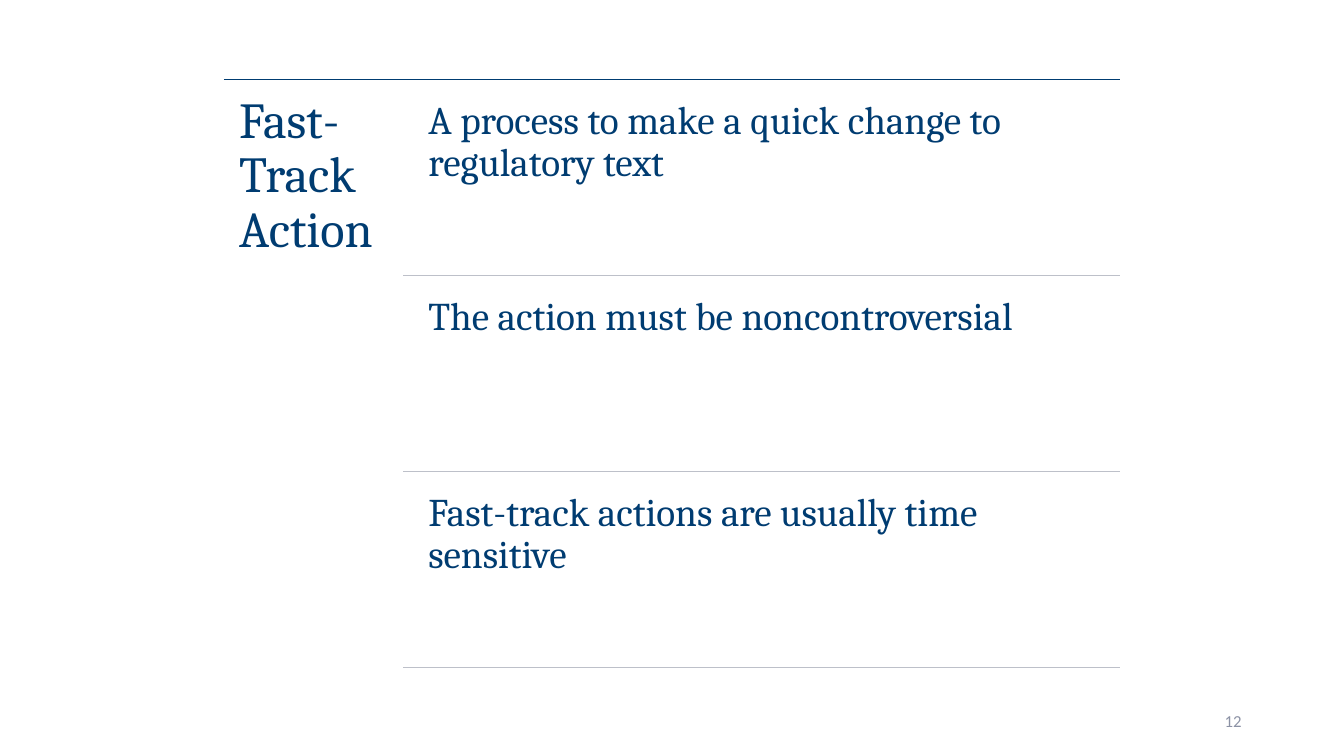
from pptx import Presentation
from pptx.dml.color import RGBColor
from pptx.enum.shapes import MSO_CONNECTOR
from pptx.enum.text import MSO_ANCHOR, PP_ALIGN
from pptx.oxml.ns import qn
from pptx.util import Pt
from lxml import etree

COLORS = {"navy": "003C71", "rule": "BDC0C9", "number": "8C92A5"}

LEFT, RIGHT, TOP = 160, 800, 56.9
RULE_LEFT, POINT_LEFT = 288, 297.6
ROW_PITCH, POINT_GAP, POINT_HEIGHT = 140, 6.6, 133.2

POINTS = [
    "A process to make a quick change to regulatory text",
    "The action must be noncontroversial",
    "Fast-track actions are usually time sensitive",
]


def add_rule(page, left, y, color):
    """Draw a horizontal line from left to the right edge of the content."""
    rule = page.shapes.add_connector(
        MSO_CONNECTOR.STRAIGHT, Pt(left), Pt(y), Pt(RIGHT), Pt(y))
    rule.line.color.rgb = RGBColor.from_string(COLORS[color])
    rule.line.width = Pt(1)
    etree.SubElement(rule._element.spPr, qn("a:effectLst"))


def add_text(page, text, left, top, width, height, size, font="Cambria", color="navy"):
    box = page.shapes.add_textbox(Pt(left), Pt(top), Pt(width), Pt(height))
    box.text_frame.word_wrap = True
    para = box.text_frame.paragraphs[0]
    para.text = text
    para.font.name = font
    para.font.size = Pt(size)
    para.font.color.rgb = RGBColor.from_string(COLORS[color])
    return box.text_frame


def set_body_layout(frame, inset):
    """Give a text frame equal insets and tight line spacing."""
    frame.margin_left = frame.margin_right = Pt(inset)
    frame.margin_top = frame.margin_bottom = Pt(inset)
    frame.paragraphs[0].line_spacing = 0.9


def add_title(page):
    add_rule(page, LEFT, TOP, "navy")
    frame = add_text(page, "Fast-Track Action", LEFT, TOP, 128, 427, 36)
    set_body_layout(frame, 10.8)


def add_point(page, row, text):
    """Place one point and the rule that closes its row."""
    row_top = TOP + row * ROW_PITCH
    frame = add_text(page, text, POINT_LEFT, row_top + POINT_GAP,
                     RIGHT - POINT_LEFT, POINT_HEIGHT, 28)
    set_body_layout(frame, 8.4)
    add_rule(page, RULE_LEFT, row_top + ROW_PITCH, "rule")


def add_page_number(page, number):
    frame = add_text(page, number, 678, 500.5, 216, 28.8, 12, "Calibri", "number")
    frame.vertical_anchor = MSO_ANCHOR.MIDDLE
    frame.paragraphs[0].alignment = PP_ALIGN.RIGHT


def main():
    deck = Presentation()
    deck.slide_width, deck.slide_height = Pt(960), Pt(540)
    page = deck.slides.add_slide(deck.slide_layouts[6])
    add_title(page)
    for row, text in enumerate(POINTS):
        add_point(page, row, text)
    add_page_number(page, "12")
    deck.save("out.pptx")


if __name__ == "__main__":
    main()
